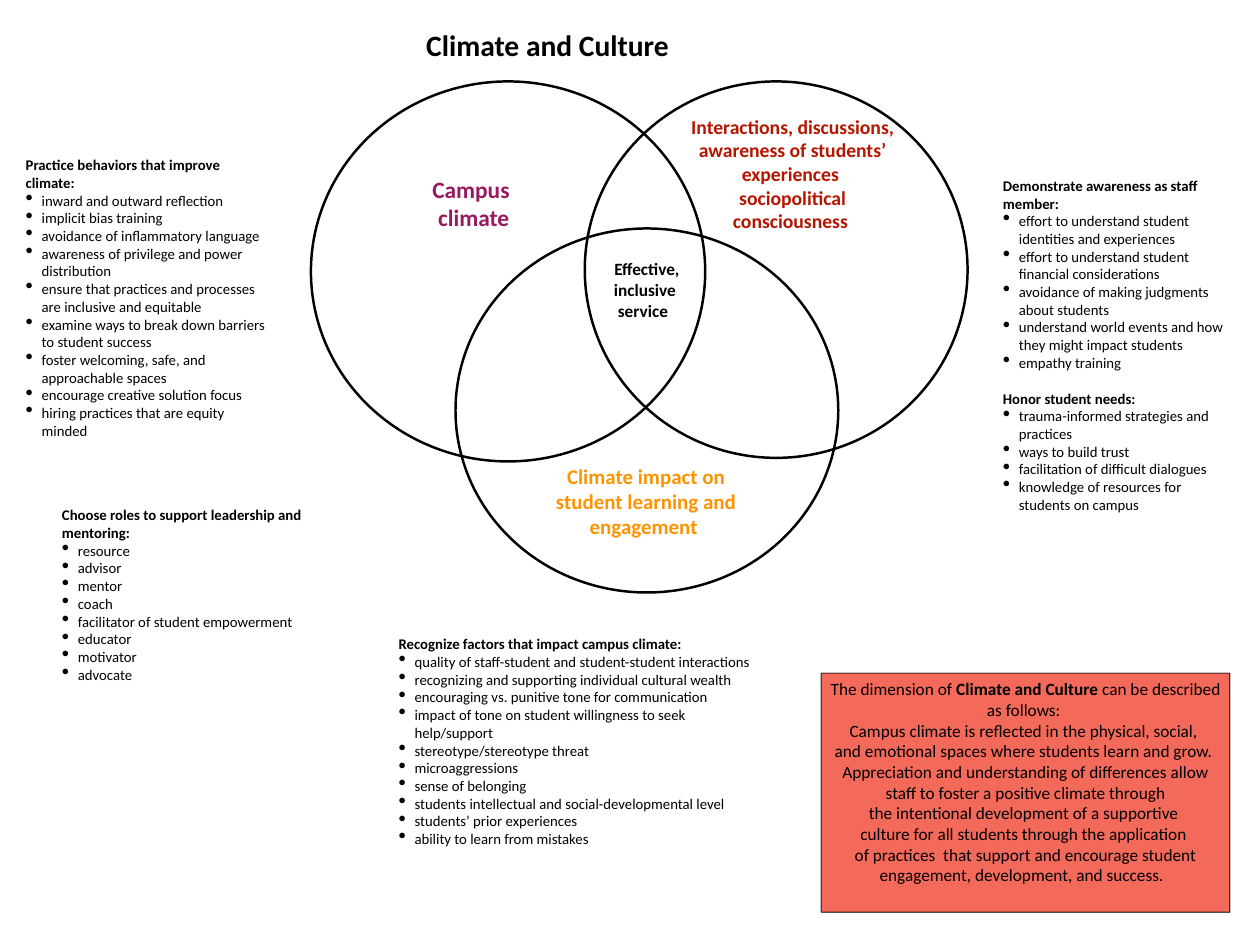
"""Build the Climate and Culture slide: a three-circle diagram with supporting lists."""
from lxml.etree import SubElement
from pptx import Presentation
from pptx.dml.color import RGBColor
from pptx.enum.shapes import MSO_SHAPE
from pptx.enum.text import MSO_ANCHOR, PP_ALIGN
from pptx.oxml.ns import qn
from pptx.util import Inches, Pt

WIDTH, HEIGHT = Inches(14.22), Inches(10.67)
FONT = "Calibri"
COLORS = {"ink": "000000", "red": "B51600", "purple": "99195E", "orange": "FE9301", "panel": "EE230C"}
OPACITY = 68
INSET = Inches(0.06)
BLANK_LINE = Pt(14.6)
PANEL_BOTTOM = Inches(0.3)
TIE = "~"
NO_BREAK_SPACE = chr(160)

# Areas are left, top, width and height in percent of the slide.
CIRCLES = [
    (24.68, 8.62, 31.29, 40.21),
    (46.41, 8.62, 30.38, 39.83),
    (36.15, 24.18, 30.38, 38.52),
]

TITLE = ((33.4, 2.34, 35.79, 4.69), "Climate and Culture", 24)

LABELS = [
    ((44.66, 26.8, 13.36, 7.69), ["Effective,", "inclusive ", "service~~"], 14, "ink"),
    ((53.52, 11.53, 18.78, 13.68),
     ["Interactions, discussions, awareness of students’ experiences ", "sociopolitical consciousness "],
     16, "red"),
    ((30.1, 17.99, 14.56, 7.03), ["Campus", " climate"], 19, "purple"),
    ((43.11, 48.45, 16.32, 9.09), ["Climate~impact on student learning and engagement~"], 17, "orange"),
]

LISTS = [
    ((31.22, 66.54, 30.1, 23.81), [
        ("Recognize factors that impact campus climate:", [
            "quality of staff-student and student-student interactions",
            "recognizing and supporting individual cultural wealth~",
            "encouraging vs. punitive tone for communication",
            "impact of tone on student willingness to seek help/support",
            "stereotype/stereotype threat",
            "microaggressions",
            "sense of belonging",
            "students intellectual and social-developmental level",
            "students’ prior experiences",
            "ability to learn from mistakes",
        ]),
    ]),
    ((1.62, 15.84, 19.97, 31.3), [
        ("Practice behaviors that improve climate:", [
            "inward and outward reflection",
            "implicit bias training",
            "avoidance of inflammatory language",
            "awareness of privilege and power distribution",
            "ensure that practices and processes are inclusive and equitable~",
            "examine ways to break down barriers to student success",
            "foster welcoming, safe, and approachable spaces",
            "encourage creative solution focus",
            "hiring practices that are equity minded",
        ]),
    ]),
    ((79.18, 17.99, 18.71, 37.02), [
        ("Demonstrate awareness as staff member:~", [
            "effort to understand student identities and experiences",
            "effort to understand student financial considerations",
            "avoidance of making judgments about students",
            "understand world events and how they might impact students",
            "empathy training",
        ]),
        ("Honor student needs:", [
            "trauma-informed strategies and practices",
            "ways to build trust",
            "facilitation of difficult dialogues",
            "knowledge of resources for students on campus",
        ]),
    ]),
    ((4.5, 52.95, 20.25, 19.96), [
        ("Choose roles to support leadership and mentoring:", [
            "resource", "advisor", "mentor", "coach", "facilitator of student empowerment",
            "educator", "motivator", "advocate",
        ]),
    ]),
]

PANEL_AREA = (65.19, 71.23, 32.42, 25.3)
PANEL = [
    [("The dimension of", False), (" Climate and Culture", True), (" can be described as follows:~", False)],
    [("Campus climate is reflected in the physical, social,~", False)],
    [("and~emotional spaces where students~learn~and grow.~ Appreciation and understanding of differences "
      "allow staff to foster~a positive climate through the~intentional~development of a supportive~", False)],
    [("culture for all~students~through the application~", False)],
    [("of practices~~that support and~encourage student engagement, development, and success.~~", False)],
]


def place(area):
    left, top, width, height = area
    return [round(share * side / 100) for share, side in
            ((left, WIDTH), (top, HEIGHT), (width, WIDTH), (height, HEIGHT))]


def color(name):
    return RGBColor.from_string(COLORS[name])


def add_outlined(slide, preset, area, points):
    shape = slide.shapes.add_shape(preset, *place(area))
    shape.shadow.inherit = False
    shape.fill.background()
    shape.line.color.rgb = color("ink")
    shape.line.width = Pt(points)
    return shape


def fade(shape):
    for fill in shape.element.spPr.iter(qn("a:solidFill")):
        SubElement(fill[0], qn("a:alpha"), val=str(OPACITY * 1000))


def write(shape, paragraphs, size, ink="ink", align=PP_ALIGN.CENTER):
    frame = shape.text_frame
    frame.word_wrap = True
    frame.vertical_anchor = MSO_ANCHOR.MIDDLE
    frame.margin_left = frame.margin_right = frame.margin_top = frame.margin_bottom = INSET
    for index, spans in enumerate(paragraphs):
        para = frame.add_paragraph() if index else frame.paragraphs[0]
        para.alignment = align
        for text, bold in spans:
            span = para.add_run()
            span.text = text.replace(TIE, NO_BREAK_SPACE)
            span.font.name, span.font.size, span.font.bold = FONT, Pt(size), bold
            span.font.color.rgb = color(ink)
    return frame


def add_bullet(para):
    properties = para._p.get_or_add_pPr()
    indent = Inches(0.18)
    properties.set("marL", str(indent))
    properties.set("indent", str(-indent))
    SubElement(properties, qn("a:buSzPct"), val="145000")
    SubElement(properties, qn("a:buChar"), char="•")


def add_list(slide, area, groups):
    lines = [(text, text == heading) for heading, items in groups for text in [heading, *items]]
    box = slide.shapes.add_textbox(*place(area))
    frame = write(box, [[line] for line in lines], 12, align=PP_ALIGN.LEFT)
    for index, (para, (text, is_heading)) in enumerate(zip(frame.paragraphs, lines)):
        if not is_heading:
            add_bullet(para)
        elif index:
            para.space_before = BLANK_LINE


def main():
    deck = Presentation()
    deck.slide_width, deck.slide_height = WIDTH, HEIGHT
    slide = deck.slides.add_slide(deck.slide_layouts[6])

    for area in CIRCLES:
        add_outlined(slide, MSO_SHAPE.OVAL, area, 2)
    for area, lines, size, ink in LABELS:
        write(slide.shapes.add_textbox(*place(area)), [[(line, True)] for line in lines], size, ink)

    area, text, size = TITLE
    write(slide.shapes.add_textbox(*place(area)), [[(text, True)]], size, align=PP_ALIGN.LEFT)

    for area, groups in LISTS:
        add_list(slide, area, groups)

    panel = add_outlined(slide, MSO_SHAPE.RECTANGLE, PANEL_AREA, 1)
    panel.fill.solid()
    panel.fill.fore_color.rgb = color("panel")
    fade(panel)
    write(panel, PANEL, 14).margin_bottom = PANEL_BOTTOM

    deck.save("out.pptx")


if __name__ == "__main__":
    main()
